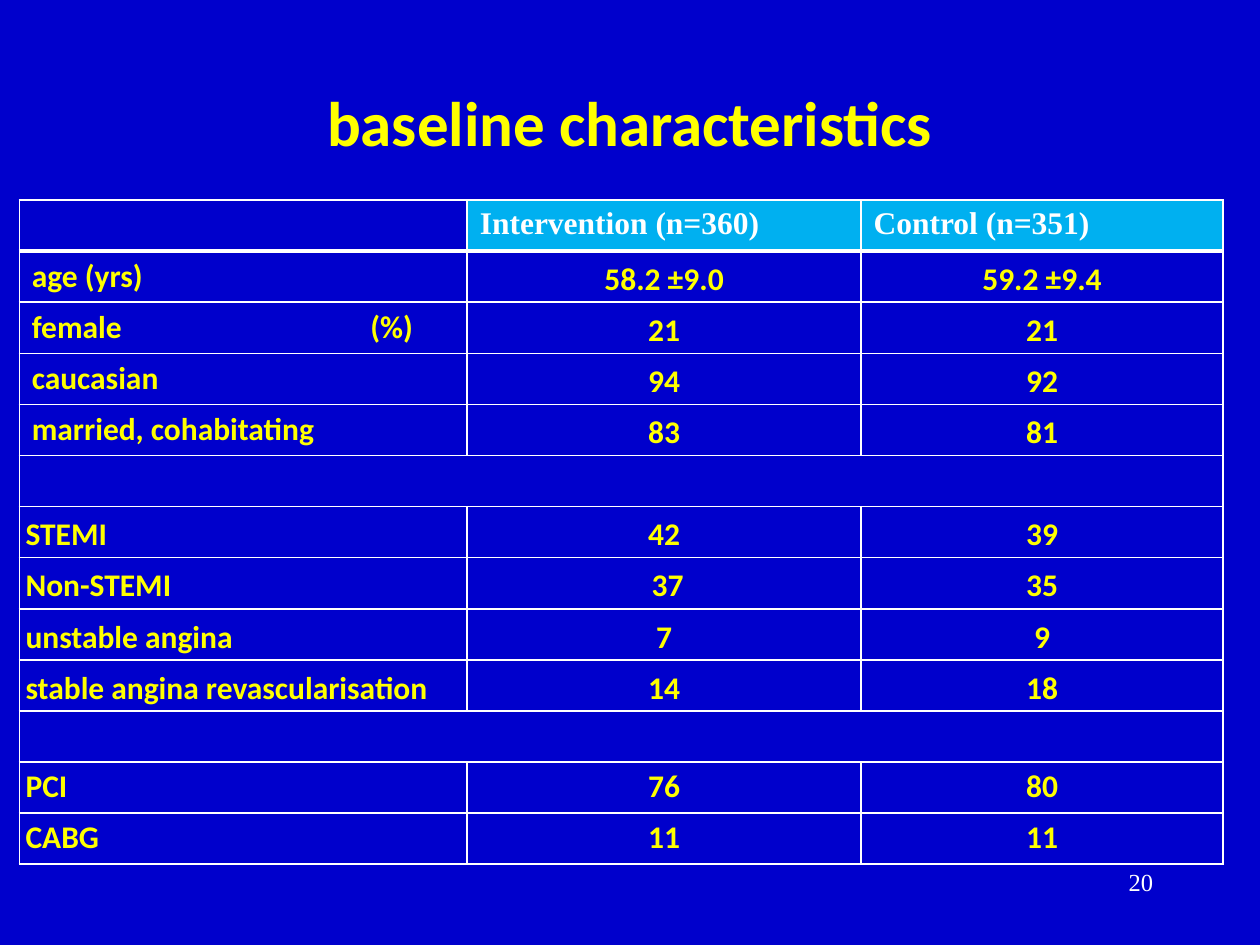
from dataclasses import dataclass
from lxml.etree import SubElement
from pptx import Presentation
from pptx.dml.color import RGBColor
from pptx.enum.text import MSO_ANCHOR, PP_ALIGN
from pptx.oxml.ns import qn
from pptx.slide import Slide
from pptx.util import Pt

BLUE = RGBColor(0x00, 0x00, 0xCC)
SKY = RGBColor(0x00, 0xB0, 0xF0)
YELLOW = RGBColor(0xFF, 0xFF, 0x00)
WHITE = RGBColor(0xFF, 0xFF, 0xFF)
SANS, SERIF = "Calibri", "Times New Roman"

HEADER = ("", "Intervention (n=360)", "Control (n=351)")
PATIENTS = [
    ("age (yrs)", "58.2 ±9.0", "59.2 ±9.4"),
    ("female\t(%)", "21", "21"),
    ("caucasian", "94", "92"),
    ("married, cohabitating", "83", "81"),
]
DIAGNOSES = [
    ("STEMI", "42", "39"),
    ("Non-STEMI", " 37", "35"),
    ("unstable angina", "7", "9"),
    ("stable angina revascularisation", "14", "18"),
]
TREATMENTS = [("PCI", "76", "80"), ("CABG", "11", "11")]
COLUMNS = (256, 225, 207)
ROW_HEIGHT = 29.2
UNIT_TAB = 193.5


@dataclass
class Deck:
    """Style and current slide, with one method per kind of element."""

    s: Slide
    size: float = 18
    line: float = 1
    heavy: float = 3

    def paragraph(self, tf, text, font, color, size=None, bold=True,
                  align=PP_ALIGN.LEFT, spacing=None):
        p = tf.paragraphs[0]
        p.alignment = align
        if spacing:
            p.line_spacing = spacing
        if "\t" in text:
            tabs = SubElement(p._p.get_or_add_pPr(), qn("a:tabLst"))
            SubElement(tabs, qn("a:tab"), pos=str(Pt(UNIT_TAB)), algn="l")
        p.font.size = Pt(size or self.size)
        if text:
            r = p.add_run()
            r.text = text
            r.font.name, r.font.size, r.font.bold = font, Pt(size or self.size), bold
            r.font.color.rgb = color

    def text(self, box, text, anchor=MSO_ANCHOR.TOP, **style):
        tf = self.s.shapes.add_textbox(*map(Pt, box)).text_frame
        tf.word_wrap = True
        tf.vertical_anchor = anchor
        self.paragraph(tf, text, **style)

    def borders(self, cell, top, bottom):
        tc_pr = cell._tc.get_or_add_tcPr()
        for side, width in zip("LRTB", (self.line, self.line, top, bottom)):
            ln = SubElement(tc_pr, qn(f"a:ln{side}"), w=str(Pt(width)))
            SubElement(SubElement(ln, qn("a:solidFill")), qn("a:srgbClr"), val=str(WHITE))

    def cell(self, cell, text, fill=None, tight=False, anchor=MSO_ANCHOR.TOP,
             top=None, bottom=None, **style):
        self.borders(cell, top or self.line, bottom or self.line)
        if fill:
            cell.fill.solid()
            cell.fill.fore_color.rgb = fill
        else:
            cell.fill.background()
        if tight:
            cell.margin_left = cell.margin_right = Pt(3.6)
            cell.margin_top = cell.margin_bottom = 0
            style["spacing"] = 1.15
        cell.vertical_anchor = anchor
        self.paragraph(cell.text_frame, text, **style)

    def table(self, left, top):
        gap = [("", "", "")]
        rows = [HEADER] + PATIENTS + gap + DIAGNOSES + gap + TREATMENTS
        size = Pt(sum(COLUMNS)), Pt(ROW_HEIGHT * len(rows))
        table = self.s.shapes.add_table(len(rows), len(COLUMNS), Pt(left), Pt(top), *size).table
        table.first_row = table.horz_banding = False
        for column, width in zip(table.columns, COLUMNS):
            column.width = Pt(width)
        for i, values in enumerate(rows):
            table.rows[i].height = Pt(ROW_HEIGHT)
            for j, value in enumerate(values):
                cell = table.cell(i, j)
                if i == 0:
                    self.cell(cell, value, fill=SKY if value else None, bottom=self.heavy,
                              font=SERIF, color=WHITE)
                    continue
                plain = values in gap or (j == 0 and values in PATIENTS)
                middle = not plain and values not in TREATMENTS
                self.cell(cell, value, tight=not plain, font=SANS, color=YELLOW,
                          anchor=MSO_ANCHOR.MIDDLE if middle else MSO_ANCHOR.TOP,
                          top=self.heavy if i == 1 else None,
                          align=PP_ALIGN.CENTER if j else PP_ALIGN.LEFT)
            if values in gap:
                table.cell(i, 0).merge(table.cell(i, len(COLUMNS) - 1))


def main():
    prs = Presentation()
    prs.slide_width, prs.slide_height = Pt(720), Pt(540)
    s = prs.slides.add_slide(prs.slide_layouts[6])
    s.background.fill.solid()
    s.background.fill.fore_color.rgb = BLUE
    deck = Deck(s)
    deck.text((54, 24.5, 612, 90), "baseline characteristics", MSO_ANCHOR.MIDDLE,
              font=SANS, color=YELLOW, size=36, align=PP_ALIGN.CENTER)
    deck.text((516, 492, 150, 36), "20", font=SERIF, color=WHITE, size=14,
              bold=False, align=PP_ALIGN.RIGHT)
    deck.table(11, 114.3)
    prs.save("out.pptx")


if __name__ == "__main__":
    main()
